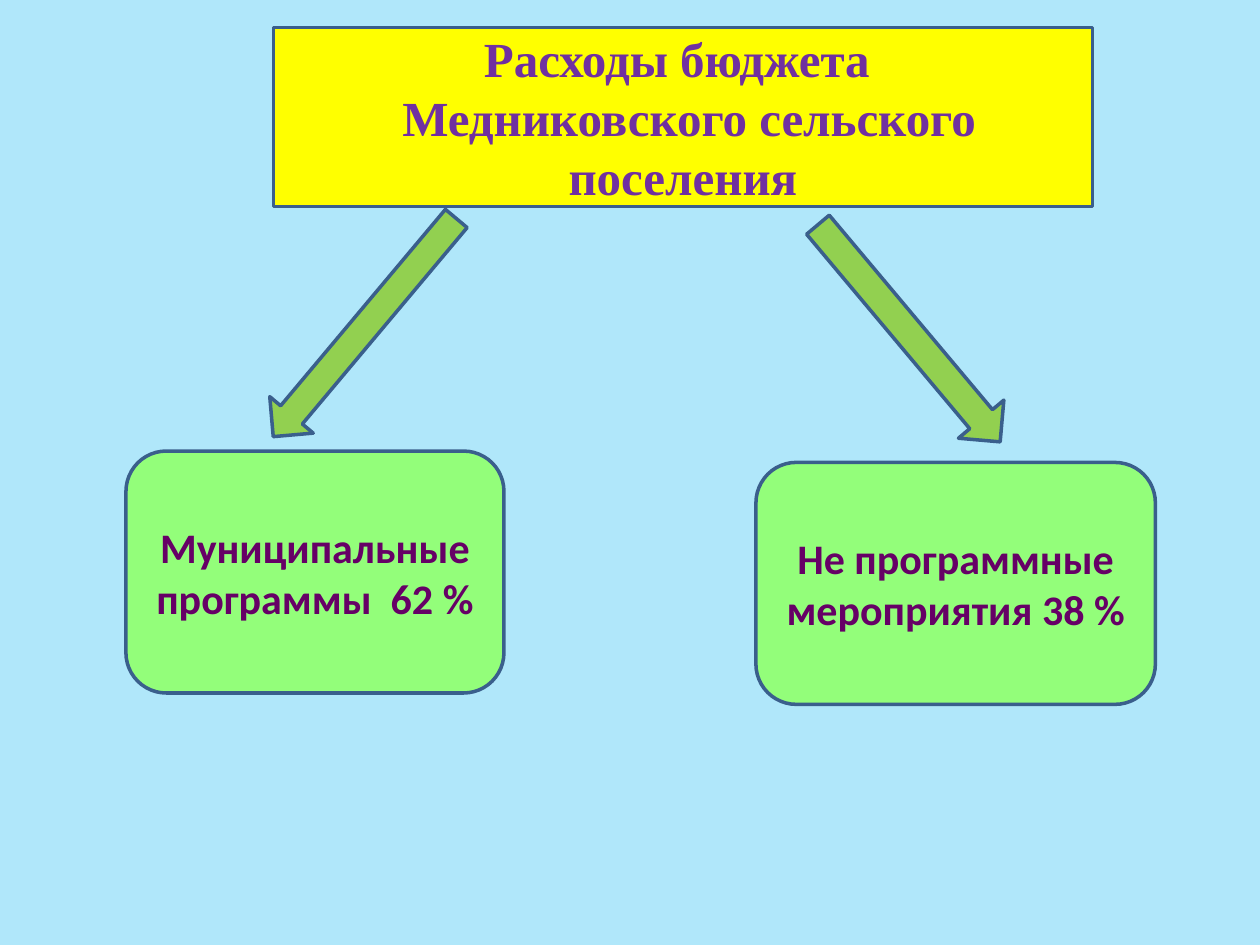
"""Build a slide that splits budget spending into two parts."""
from lxml import etree
from pptx import Presentation
from pptx.dml.color import RGBColor
from pptx.enum.shapes import MSO_SHAPE
from pptx.enum.text import MSO_ANCHOR, MSO_AUTO_SIZE, PP_ALIGN
from pptx.oxml.ns import qn
from pptx.util import Inches, Pt

ROUND = MSO_SHAPE.ROUNDED_RECTANGLE
ARROW = MSO_SHAPE.DOWN_ARROW
MIDDLE = MSO_ANCHOR.MIDDLE
CENTER = PP_ALIGN.CENTER
FIXED = MSO_AUTO_SIZE.NONE


def paint(part, color):
    part.solid()
    part.fore_color.rgb = RGBColor.from_string(color)


def style(shape, fill, lines=(), font=None):
    paint(shape.fill, fill)
    paint(shape.line.fill, "3A5F8C")
    shape.line.width = Pt(2)
    frame = shape.text_frame
    for name, value in {"word_wrap": True, "auto_size": FIXED, "vertical_anchor": MIDDLE}.items():
        setattr(frame, name, value)
    for i, line in enumerate(lines):
        para = frame.add_paragraph() if i else frame.paragraphs[0]
        para.alignment = CENTER
        run = para.add_run()
        run.text = line
        for name, value in font["format"].items():
            setattr(run.font, name, value)
        paint(run.font.fill, font["color"])


prs = Presentation()
prs.slide_width, prs.slide_height = Inches(10), Inches(7.5)
slide = prs.slides.add_slide(prs.slide_layouts[5])
paint(slide.background.fill, "B0E7FA")

head = {"format": {"name": "Times New Roman", "size": Pt(28), "bold": True}, "color": "7030A0"}
body = {"format": {"name": "Calibri", "size": Pt(24), "bold": True}, "color": "660066"}

title = slide.shapes.title
place = {"left": 2.17, "top": 0.22, "width": 6.5, "height": 1.42}
for name, value in place.items():
    setattr(title, name, Inches(value))
geom = etree.SubElement(title._element.spPr, qn("a:prstGeom"), prst="roundRect")
etree.SubElement(geom, qn("a:avLst"))
style(title, "FFFF00", ["Расходы бюджета ", " Медниковского сельского поселения"], head)

arrows = [((6.98, 1.52, 0.47, 2.25), -40), ((2.67, 1.47, 0.45, 2.26), 40)]
for box, turn in arrows:
    arrow = slide.shapes.add_shape(ARROW, *map(Inches, box))
    arrow.shadow.inherit = False
    arrow.rotation = turn
    style(arrow, "92D050")

parts = [
    ((1, 3.58, 3, 1.92), "Муниципальные программы  62 %"),
    ((6, 3.67, 3.17, 1.92), "Не программные мероприятия 38 %"),
]
for box, text in parts:
    card = slide.shapes.add_shape(ROUND, *map(Inches, box))
    card.shadow.inherit = False
    style(card, "93FE7A", [text], body)

prs.save("out.pptx")
